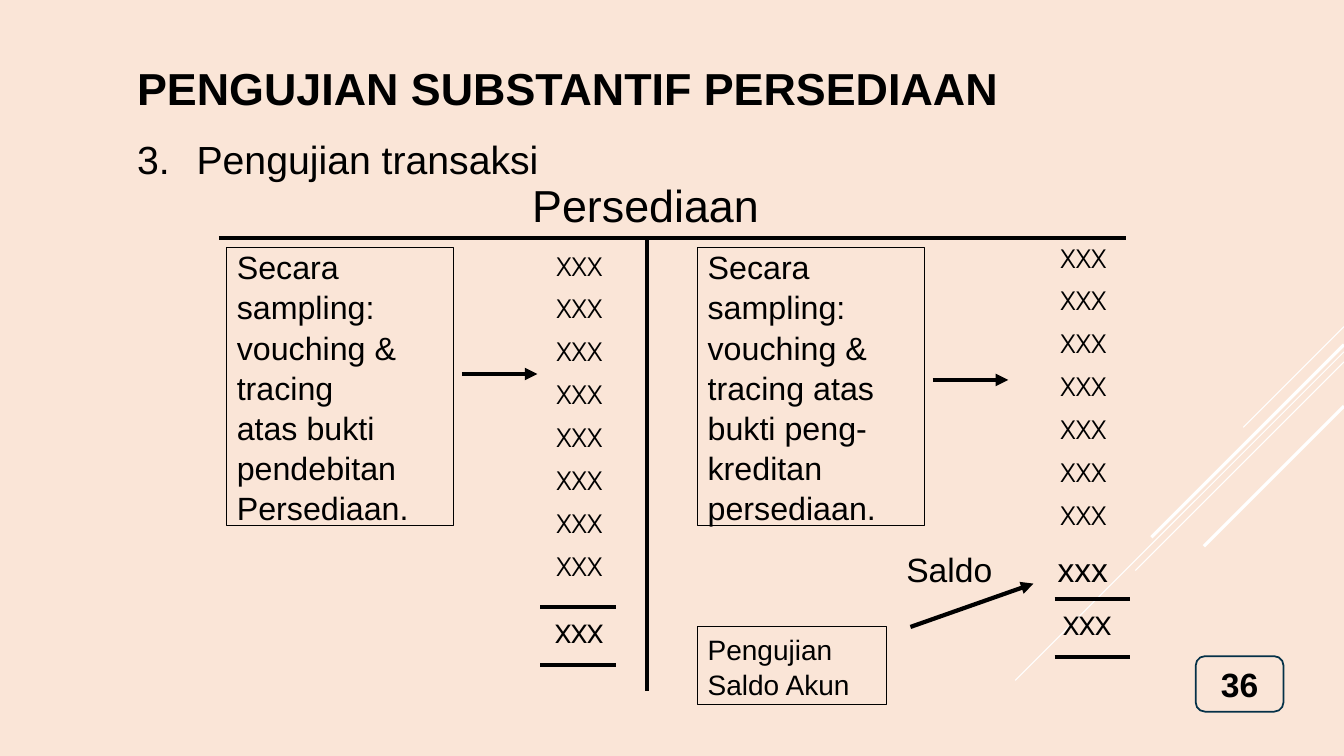
from lxml.etree import SubElement
from pptx import Presentation
from pptx.dml.color import RGBColor
from pptx.enum.shapes import MSO_CONNECTOR, MSO_SHAPE
from pptx.enum.text import MSO_ANCHOR, MSO_AUTO_SIZE, PP_ALIGN
from pptx.oxml.ns import qn
from pptx.util import Inches, Pt

COLORS = {"paper": "FAE5D7", "ink": "000000", "streak": "FFFFFF", "badge": "043148"}
BODY_FONT, FIGURE_FONT = "Arial", "TeX Gyre Adventor"


def apply(target, values):
    """Set each named value as an attribute of the target."""
    for name, value in values.items():
        setattr(target, name, value)


def color(name):
    """Return the palette colour of that name."""
    return RGBColor.from_string(COLORS[name])


class SlideBuilder:
    """Holds the current slide and draws styled elements on it."""

    def __init__(self, deck):
        self.slide = deck.slides.add_slide(deck.slide_layouts[1])
        fill = self.slide.background.fill
        fill.solid()
        fill.fore_color.rgb = color("paper")

    def set_text(self, shape, lines, size, font=BODY_FONT, bold=False,
                 anchor=MSO_ANCHOR.TOP, gap=0, **paragraph_format):
        """Fill a shape with formatted paragraphs."""
        frame = shape.text_frame
        apply(frame, {"text": "\n".join(lines), "word_wrap": True,
                      "auto_size": MSO_AUTO_SIZE.NONE, "vertical_anchor": anchor})
        for index, paragraph in enumerate(frame.paragraphs):
            apply(paragraph, {"alignment": PP_ALIGN.LEFT,
                              "space_before": Pt(gap if index else 0),
                              **paragraph_format})
            for run in paragraph.runs:
                apply(run.font, {"name": font, "size": Pt(size), "bold": bold})
                run.font.color.rgb = color("ink")
        return frame.paragraphs[0]

    def placeholder(self, index, area, lines, size, **text_format):
        """Move and fill a template placeholder."""
        holder = self.slide.placeholders[index]
        apply(holder, dict(zip(("left", "top", "width", "height"), map(Inches, area))))
        return self.set_text(holder, lines, size, **text_format)

    def text(self, area, lines, size, **text_format):
        """Add a text box."""
        label = self.slide.shapes.add_textbox(*map(Inches, area))
        return self.set_text(label, lines, size, **text_format)

    def box(self, area, lines, size, kind=MSO_SHAPE.RECTANGLE, border="ink",
            weight=0.75, **text_format):
        """Add a bordered box with text."""
        panel = self.slide.shapes.add_shape(kind, *map(Inches, area))
        panel.shadow.inherit = False
        panel.fill.solid()
        panel.fill.fore_color.rgb = color("paper")
        panel.line.color.rgb = color(border)
        panel.line.width = Pt(weight)
        return self.set_text(panel, lines, size, **text_format)

    def line(self, start, end, weight=3, stroke="ink", arrow=False):
        """Add a straight line, with an arrowhead at its end if asked."""
        rule = self.slide.shapes.add_connector(
            MSO_CONNECTOR.STRAIGHT, *map(Inches, (*start, *end)))
        rule.line.color.rgb = color(stroke)
        rule.line.width = Pt(weight)
        properties = rule._element.spPr
        if arrow:
            SubElement(properties.find(qn("a:ln")), qn("a:tailEnd"), type="triangle")
        SubElement(properties, qn("a:effectLst"))


def number_from(paragraph, start, indent):
    """Number a paragraph with a hanging indent."""
    properties = paragraph._p.get_or_add_pPr()
    properties.set("marL", str(Inches(indent)))
    properties.set("indent", str(-Inches(indent)))
    SubElement(properties, qn("a:buFont"), typeface=BODY_FONT)
    SubElement(properties, qn("a:buAutoNum"), type="arabicPeriod", startAt=str(start))


def add_tab(paragraph, position):
    """Give a paragraph a left tab stop."""
    stops = SubElement(paragraph._p.get_or_add_pPr(), qn("a:tabLst"))
    SubElement(stops, qn("a:tab"), pos=str(Inches(position)), algn="l")


def main():
    """Build the inventory testing slide."""
    deck = Presentation()
    apply(deck, {"slide_width": Inches(13.33), "slide_height": Inches(7.5)})
    page = SlideBuilder(deck)

    for top, run, weight in ((3.24, 1, 0.75), (3.49, 3.26, 0.75), (3.59, 2.07, 0.75),
                             (3.42, 1.91, 2.25), (4.03, 1.39, 2.25)):
        page.line((13.33, top), (13.33 - run, top + run), weight, "streak")
    page.box((11.86, 6.51, 0.87, 0.55), ["36"], 24, MSO_SHAPE.ROUNDED_RECTANGLE,
             "badge", 1.25, bold=True, anchor=MSO_ANCHOR.MIDDLE,
             alignment=PP_ALIGN.CENTER)

    page.placeholder(0, (1.26, 0.51, 9.33, 0.71), ["PENGUJIAN SUBSTANTIF PERSEDIAAN"],
                     32, bold=True, anchor=MSO_ANCHOR.MIDDLE)
    topic = page.placeholder(1, (1.26, 1.29, 9, 0.63), ["Pengujian transaksi"], 28,
                             space_before=Pt(3), space_after=Pt(6))
    number_from(topic, 3, 0.59)

    page.text((5.18, 1.71, 2.47, 0.64), ["Persediaan"], 32)
    page.line((2.17, 2.36), (11.17, 2.36))
    page.line((6.42, 2.36), (6.42, 6.86))

    for left, top, entries in ((5.42, 2.44, 8), (10.42, 2.36, 7)):
        page.text((left, top, 0.83, 0.44 * entries), ["XXX"] * entries, 18,
                  font=FIGURE_FONT, gap=9)
    balance = page.text((8.89, 5.4, 2.22, 0.5), ["Saldo\txxx"], 24)
    add_tab(balance, 1.5)

    for left, top, total_left in ((5.36, 6.02, 5.41), (10.46, 5.94, 10.45)):
        for rule_top in (top, top + 0.58):
            page.line((left, rule_top), (left + 0.75, rule_top))
        page.text((total_left, top - 0.02, 0.71, 0.5), ["xxx"], 24, font=FIGURE_FONT)

    debit_test = ["Secara", "sampling:", "vouching &", "tracing",
                  "atas bukti", "pendebitan", "Persediaan."]
    credit_test = ["Secara", "sampling:", "vouching &", "tracing atas",
                   "bukti peng-", "kreditan", "persediaan."]
    for left, test, arrow_top in ((2.25, debit_test, 3.71), (6.92, credit_test, 3.77)):
        page.box((left, 2.46, 2.25, 2.75), test, 23, anchor=MSO_ANCHOR.MIDDLE,
                 line_spacing=1.04)
        page.line((left + 2.33, arrow_top), (left + 3.08, arrow_top), arrow=True)

    page.box((6.92, 6.22, 1.87, 0.77), ["Pengujian", "Saldo Akun"], 20,
             line_spacing=1.03)
    page.line((9.03, 6.22), (10.25, 5.79), arrow=True)
    deck.save("out.pptx")


if __name__ == "__main__":
    main()
